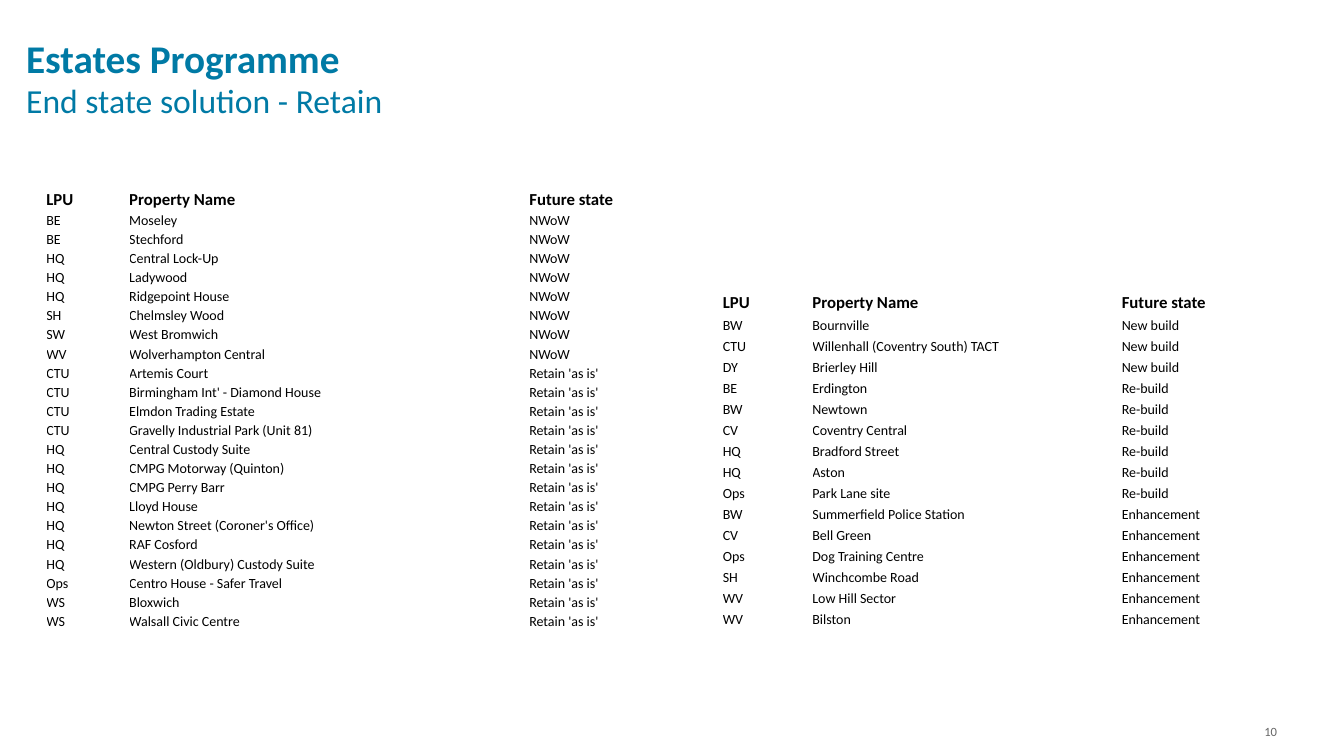
from dataclasses import dataclass

from lxml import etree
from pptx import Presentation
from pptx.dml.color import RGBColor
from pptx.enum import text
from pptx.oxml import ns
from pptx import util as u


@dataclass(frozen=True)
class Theme:
    font: str = "Calibri"
    title: str = "007AA5"
    ink: str = "000000"
    muted: str = "666666"
    paper: str = "FFFFFF"
    title_size: float = 28
    subtitle_size: float = 24
    header_size: float = 12
    body_size: float = 10
    number_size: float = 9


@dataclass(frozen=True)
class Group:
    """Properties that share one future state, as (LPU, name) pairs."""
    state: str
    properties: list[tuple[str, str]]


@dataclass(frozen=True)
class PropertyTable:
    left: float
    top: float
    widths: tuple[float, float, float]
    header_height: float
    row_height: float
    groups: list[Group]


THEME = Theme()
HEADINGS = ("LPU", "Property Name", "Future state")

RETAINED = PropertyTable(33.1, 135.4, (59.2, 285.8, 117.9), 14.65, 13.64, [
    Group("NWoW", [
        ("BE", "Moseley"),
        ("BE", "Stechford"),
        ("HQ", "Central Lock-Up"),
        ("HQ", "Ladywood"),
        ("HQ", "Ridgepoint House"),
        ("SH", "Chelmsley Wood"),
        ("SW", "West Bromwich"),
        ("WV", "Wolverhampton Central"),
    ]),
    Group("Retain 'as is'", [
        ("CTU", "Artemis Court"),
        ("CTU", "Birmingham Int' - Diamond House"),
        ("CTU", "Elmdon Trading Estate"),
        ("CTU", "Gravelly Industrial Park (Unit 81)"),
        ("HQ", "Central Custody Suite"),
        ("HQ", "CMPG Motorway (Quinton)"),
        ("HQ", "CMPG Perry Barr"),
        ("HQ", "Lloyd House"),
        ("HQ", "Newton Street (Coroner's Office)"),
        ("HQ", "RAF Cosford"),
        ("HQ", "Western (Oldbury) Custody Suite"),
        ("Ops", "Centro House - Safer Travel"),
        ("WS", "Bloxwich"),
        ("WS", "Walsall Civic Centre"),
    ]),
])

IMPROVED = PropertyTable(516.3, 208.8, (64, 221, 128.3), 15, 15, [
    Group("New build", [
        ("BW", "Bournville"),
        ("CTU", "Willenhall (Coventry South) TACT"),
        ("DY", "Brierley Hill"),
    ]),
    Group("Re-build", [
        ("BE", "Erdington"),
        ("BW", "Newtown"),
        ("CV", "Coventry Central"),
        ("HQ", "Bradford Street"),
        ("HQ", "Aston"),
        ("Ops", "Park Lane site"),
    ]),
    Group("Enhancement", [
        ("BW", "Summerfield Police Station"),
        ("CV", "Bell Green"),
        ("Ops", "Dog Training Centre"),
        ("SH", "Winchcombe Road"),
        ("WV", "Low Hill Sector"),
        ("WV", "Bilston"),
    ]),
])


def add_span(para, words: str, size: float, colour: str, bold: bool = False) -> None:
    span = para.add_run()
    span.text = words
    span.font.name = THEME.font
    span.font.size = u.Pt(size)
    span.font.bold = bold
    span.font.color.rgb = RGBColor.from_string(colour)


def add_box(page, left: float, top: float, width: float, height: float, anchor):
    """Add a wrapping text box without margins and return its first paragraph."""
    box = page.shapes.add_textbox(u.Pt(left), u.Pt(top), u.Pt(width), u.Pt(height))
    frame = box.text_frame
    frame.word_wrap = True
    frame.vertical_anchor = anchor
    frame.margin_left = frame.margin_top = frame.margin_right = frame.margin_bottom = 0
    return frame.paragraphs[0]


def set_borders(cell, colour: str) -> None:
    properties = cell._tc.get_or_add_tcPr()
    for place, side in enumerate(("lnL", "lnR", "lnT", "lnB")):
        line = etree.Element(ns.qn(f"a:{side}"), w=str(u.Pt(1)))
        fill = etree.SubElement(line, ns.qn("a:solidFill"))
        etree.SubElement(fill, ns.qn("a:srgbClr"), val=colour)
        properties.insert(place, line)


def fill_cell(cell, words: str, size: float, bold: bool) -> None:
    cell.margin_left = cell.margin_top = cell.margin_right = cell.margin_bottom = 0
    cell.vertical_anchor = text.MSO_ANCHOR.BOTTOM
    cell.fill.solid()
    cell.fill.fore_color.rgb = RGBColor.from_string(THEME.paper)
    set_borders(cell, THEME.paper)
    add_span(cell.text_frame.paragraphs[0], words, size, THEME.ink, bold)


def draw_table(page, design: PropertyTable) -> None:
    rows = [HEADINGS] + [(lpu, name, group.state)
                         for group in design.groups for lpu, name in group.properties]
    height = design.header_height + design.row_height * (len(rows) - 1)
    table = page.shapes.add_table(
        len(rows), len(HEADINGS), u.Pt(design.left), u.Pt(design.top),
        u.Pt(sum(design.widths)), u.Pt(height)).table
    table.horz_banding = False
    for column, width in zip(table.columns, design.widths):
        column.width = u.Pt(width)
    for r, row in enumerate(rows):
        header = r == 0
        table.rows[r].height = u.Pt(design.header_height if header else design.row_height)
        size = THEME.header_size if header else THEME.body_size
        for c, words in enumerate(row):
            fill_cell(table.cell(r, c), words, size, header)


def main() -> None:
    deck = Presentation()
    deck.slide_width, deck.slide_height = u.Pt(960), u.Pt(540)
    page = deck.slides.add_slide(deck.slide_layouts[6])

    # Page number
    para = add_box(page, 854.6, 517.7, 57.6, 10, text.MSO_ANCHOR.MIDDLE)
    para.alignment = text.PP_ALIGN.RIGHT
    add_span(para, "10", THEME.number_size, THEME.muted)

    # Title and subtitle
    para = add_box(page, 18.7, 0, 864, 86.4, text.MSO_ANCHOR.BOTTOM)
    para.line_spacing = 0.95
    add_span(para, "Estates Programme", THEME.title_size, THEME.title, bold=True)
    para.add_line_break()
    add_span(para, "End state solution - Retain", THEME.subtitle_size, THEME.title)

    # Property tables
    for design in (RETAINED, IMPROVED):
        draw_table(page, design)

    deck.save("out.pptx")


if __name__ == "__main__":
    main()
